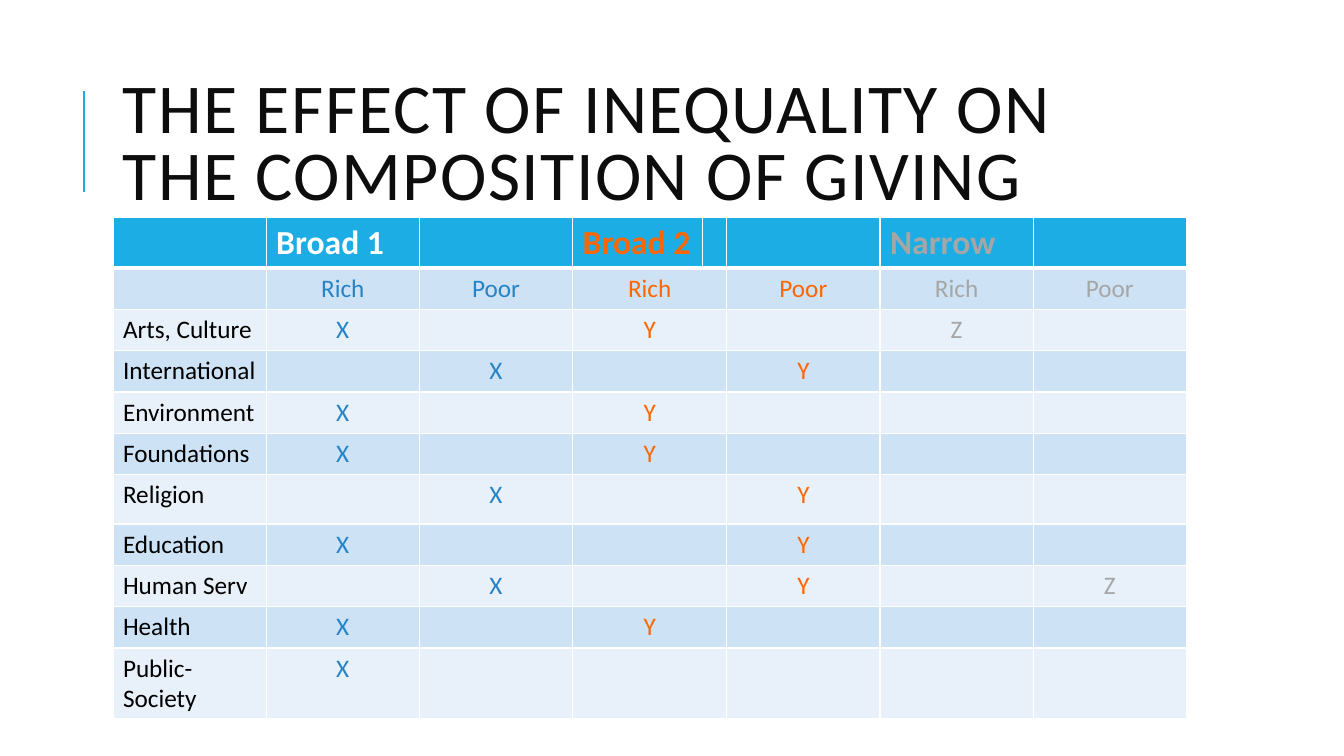
from lxml.etree import SubElement
from pptx import Presentation
from pptx.dml.color import RGBColor
from pptx.enum.shapes import MSO_CONNECTOR
from pptx.enum.text import MSO_ANCHOR, PP_ALIGN
from pptx.oxml import parse_xml
from pptx.oxml.ns import nsdecls, qn
from pptx.util import Pt

EMU_PER_PX = 9144
FONT = "Calibri"
ACCENT, WHITE, BLACK = "1CADE4", "FFFFFF", "000000"
BLUE, ORANGE, GREY = "2683C6", "FF6600", "A6A6A6"
BANDS = ("CDE3F5", "E8F1FA")
COLUMN_WIDTHS = [152, 152, 152, 129, 23, 152, 152, 152]
ROW_HEIGHTS = [33] + [41] * 5 + [49] + [41] * 4
GROUPS = [
    ("Broad 1", "X", WHITE, BLUE, {"Rich": 1, "Poor": 2}),
    ("Broad 2", "Y", ORANGE, ORANGE, {"Rich": 3, "Poor": 5}),
    ("Narrow", "Z", GREY, GREY, {"Rich": 6, "Poor": 7}),
]
CAUSES = [
    ("Arts, Culture", "Rich", "Rich", "Rich"),
    ("International", "Poor", "Poor", None),
    ("Environment", "Rich", "Rich", None),
    ("Foundations", "Rich", "Rich", None),
    ("Religion", "Poor", "Poor", None),
    ("Education", "Rich", "Poor", None),
    ("Human Serv", "Poor", "Poor", "Poor"),
    ("Health", "Rich", "Rich", None),
    ("Public-Society", "Rich", None, None),
]


def px(length):
    """Turn px into EMU."""
    return length * EMU_PER_PX


def colour(code):
    """Turn a hex string into a colour."""
    return RGBColor.from_string(code)


def add_run(paragraph, text, size, code, bold=False):
    """Add a formatted run and return it."""
    run = paragraph.add_run()
    run.text = text
    run.font.name = FONT
    run.font.size = Pt(size)
    run.font.bold = bold
    run.font.color.rgb = colour(code)
    return run


def add_accent_line(slide, x, top, bottom):
    """Draw the vertical line beside the title."""
    accent = slide.shapes.add_connector(
        MSO_CONNECTOR.STRAIGHT, px(x), px(bottom), px(x), px(top))
    accent.line.color.rgb = colour(ACCENT)
    accent.line.width = Pt(1.5)
    SubElement(accent.element.spPr, qn("a:effectLst"))


def add_title(slide, text, left, top, width, height):
    """Add the slide title with slightly spaced letters."""
    frame = slide.shapes.add_textbox(
        px(left), px(top), px(width), px(height)).text_frame
    frame.word_wrap = True
    frame.vertical_anchor = MSO_ANCHOR.MIDDLE
    heading = frame.paragraphs[0]
    heading.line_spacing = 0.8
    run = add_run(heading, text, 50, "0D0D0D")
    run.font._element.set("spc", "100")


def style_cell(cell, fill, top=1, bottom=1):
    """Fill a cell and give it white borders."""
    cell.fill.solid()
    cell.fill.fore_color.rgb = colour(fill)
    properties = cell._tc.get_or_add_tcPr()
    sides = (("L", 1), ("R", 1), ("T", top), ("B", bottom))
    for position, (side, weight) in enumerate(sides):
        properties.insert(position, parse_xml(
            f'<a:ln{side} {nsdecls("a")} w="{Pt(weight)}"><a:solidFill>'
            f'<a:srgbClr val="{WHITE}"/></a:solidFill></a:ln{side}>'))


def write_cell(cell, text, code, size=18, bold=False, centred=True):
    """Write one run into a table cell."""
    paragraph = cell.text_frame.paragraphs[0]
    paragraph.alignment = PP_ALIGN.CENTER if centred else PP_ALIGN.LEFT
    add_run(paragraph, text, size, code, bold)


def add_giving_grid(slide, left, top):
    """Add the empty, banded grid and return its table."""
    grid = slide.shapes.add_table(
        len(ROW_HEIGHTS), len(COLUMN_WIDTHS), px(left), px(top),
        px(sum(COLUMN_WIDTHS)), px(sum(ROW_HEIGHTS))).table
    for column, width in zip(grid.columns, COLUMN_WIDTHS):
        column.width = px(width)
    for index, (row, height) in enumerate(zip(grid.rows, ROW_HEIGHTS)):
        row.height = px(height)
        for cell in row.cells:
            if index == 0:
                style_cell(cell, ACCENT, bottom=3)
            else:
                style_cell(cell, BANDS[(index - 1) % 2],
                           top=3 if index == 1 else 1)
        if index:
            grid.cell(index, 3).merge(grid.cell(index, 4))
    return grid


def fill_giving_grid(grid):
    """Write the headings, causes and marks."""
    for name, _, heading_code, code, columns in GROUPS:
        write_cell(grid.cell(0, columns["Rich"]), name, heading_code,
                   size=24, bold=True, centred=False)
        for donors, column in columns.items():
            write_cell(grid.cell(1, column), donors, code)
    for row, (cause, *favoured) in enumerate(CAUSES, start=2):
        write_cell(grid.cell(row, 0), cause, BLACK, centred=False)
        for donors, (_, mark, _, code, columns) in zip(favoured, GROUPS):
            if donors:
                write_cell(grid.cell(row, columns[donors]), mark, code)


def main():
    """Build and save the slide."""
    deck = Presentation()
    deck.slide_width, deck.slide_height = px(1333), px(750)
    slide = deck.slides.add_slide(deck.slide_layouts[6])
    add_accent_line(slide, 83, 90, 190)
    add_title(slide, "THE EFFECT OF INEQUALITY ON THE COMPOSITION OF GIVING",
              112, 64, 1063, 164)
    fill_giving_grid(add_giving_grid(slide, 112, 216))
    deck.save("out.pptx")


if __name__ == "__main__":
    main()
